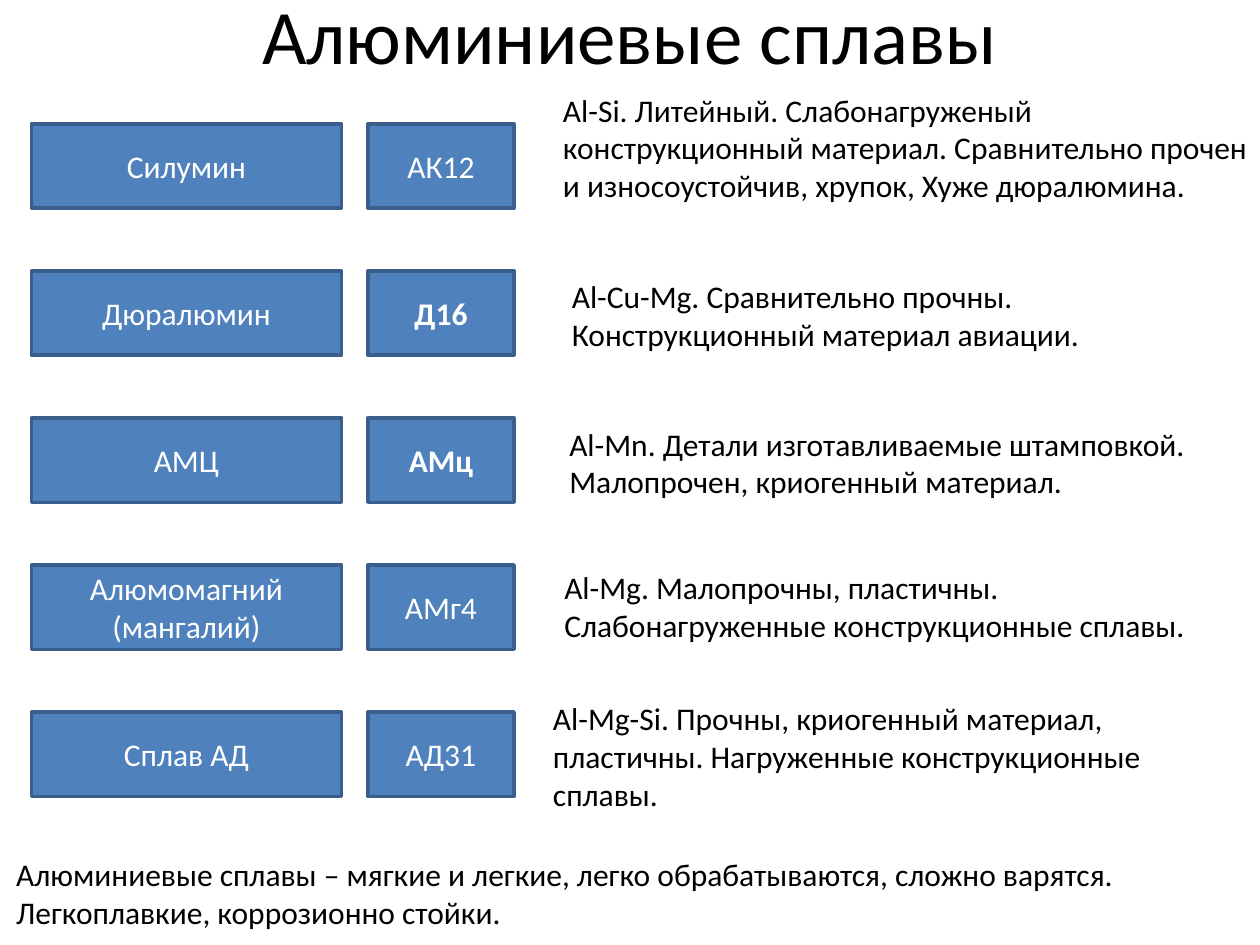
from pptx import Presentation, util as u
from pptx.dml.color import RGBColor
from pptx.enum import shapes, text

COLUMNS, ROWS = 100, 75  # grid of the slide
COLORS = {"fill": "4F81BD", "line": "3A5F8C", "light": "FFFFFF", "dark": "000000"}


class SlideBuilder:
    font = "Calibri"
    body_size = 18

    def __init__(self, presentation):
        self.column = presentation.slide_width / COLUMNS
        self.row = presentation.slide_height / ROWS
        self.slide = presentation.slides.add_slide(presentation.slide_layouts[6])

    def place(self, left, top, width, height):
        return (round(left * self.column), round(top * self.row),
                round(width * self.column), round(height * self.row))

    def set_words(self, shape, words, color, size, centered, bold=False):
        frame = shape.text_frame
        frame.text = words
        frame.word_wrap = True
        frame.vertical_anchor = text.MSO_ANCHOR.MIDDLE if centered else text.MSO_ANCHOR.TOP
        for paragraph in frame.paragraphs:
            paragraph.alignment = text.PP_ALIGN.CENTER if centered else text.PP_ALIGN.LEFT
            for run in paragraph.runs:
                run.font.name = self.font
                run.font.size = u.Pt(size)
                run.font.bold = bold
                run.font.color.rgb = RGBColor.from_string(COLORS[color])

    def title(self, words, *area):
        shape = self.slide.shapes.add_textbox(*self.place(*area))
        self.set_words(shape, words, "dark", 44, centered=True)

    def note(self, words, *area):
        shape = self.slide.shapes.add_textbox(*self.place(*area))
        self.set_words(shape, words, "dark", self.body_size, centered=False)
        shape.text_frame.auto_size = text.MSO_AUTO_SIZE.SHAPE_TO_FIT_TEXT

    def box(self, words, *area, bold=False):
        shape = self.slide.shapes.add_shape(shapes.MSO_SHAPE.RECTANGLE, *self.place(*area))
        shape.shadow.inherit = False
        shape.fill.solid()
        shape.fill.fore_color.rgb = RGBColor.from_string(COLORS["fill"])
        shape.line.color.rgb = RGBColor.from_string(COLORS["line"])
        shape.line.width = u.Pt(2)
        self.set_words(shape, words, "light", self.body_size, centered=True, bold=bold)


# Alloy name, grade, bold grade, description, description area
ALLOYS = [
    ("Силумин", "АК12", False,
     "Al-Si. Литейный. Слабонагруженый конструкционный материал. "
     "Сравнительно прочен и износоустойчив, хрупок, Хуже дюралюмина.",
     (43.7, 6.7, 56.3, 13.1)),
    ("Дюралюмин", "Д16", True,
     "Al-Cu-Mg. Сравнительно прочны. Конструкционный материал авиации.",
     (44.4, 21.5, 55, 7.1)),
    ("АМЦ", "АМц", True,
     "Al-Mn. Детали изготавливаемые штамповкой. Малопрочен, криогенный материал.",
     (44.2, 33.2, 55, 7.1)),
    ("Алюмомагний\n(мангалий)", "АМг4", False,
     "Al-Mg. Малопрочны, пластичны. Слабонагруженные конструкционные сплавы.",
     (43.8, 44.6, 57.5, 7.1)),
    ("Сплав АД", "АД31", False,
     "Al-Mg-Si. Прочны, криогенный материал, пластичны. "
     "Нагруженные конструкционные сплавы.",
     (42.9, 55, 57.5, 10.1)),
]
FIRST_TOP, PITCH, BOX_HEIGHT = 9.83, 11.67, 6.7


def main():
    presentation = Presentation()
    presentation.slide_width = u.Inches(10)
    presentation.slide_height = u.Inches(7.5)
    builder = SlideBuilder(presentation)

    builder.title("Алюминиевые сплавы", 5, -1.7, 90, 8.7)

    # One row per alloy
    for index, (name, grade, bold, description, area) in enumerate(ALLOYS):
        top = FIRST_TOP + index * PITCH
        builder.box(name, 2.5, top, 24.6, BOX_HEIGHT)
        builder.box(grade, 29.2, top, 11.6, BOX_HEIGHT, bold=bold)
        builder.note(description, *area)

    # Summary
    builder.note("Алюминиевые сплавы – мягкие и легкие, легко обрабатываются, "
                 "сложно варятся. Легкоплавкие, коррозионно стойки.",
                 0.3, 67.4, 97.9, 7.1)

    presentation.save("out.pptx")


if __name__ == "__main__":
    main()
